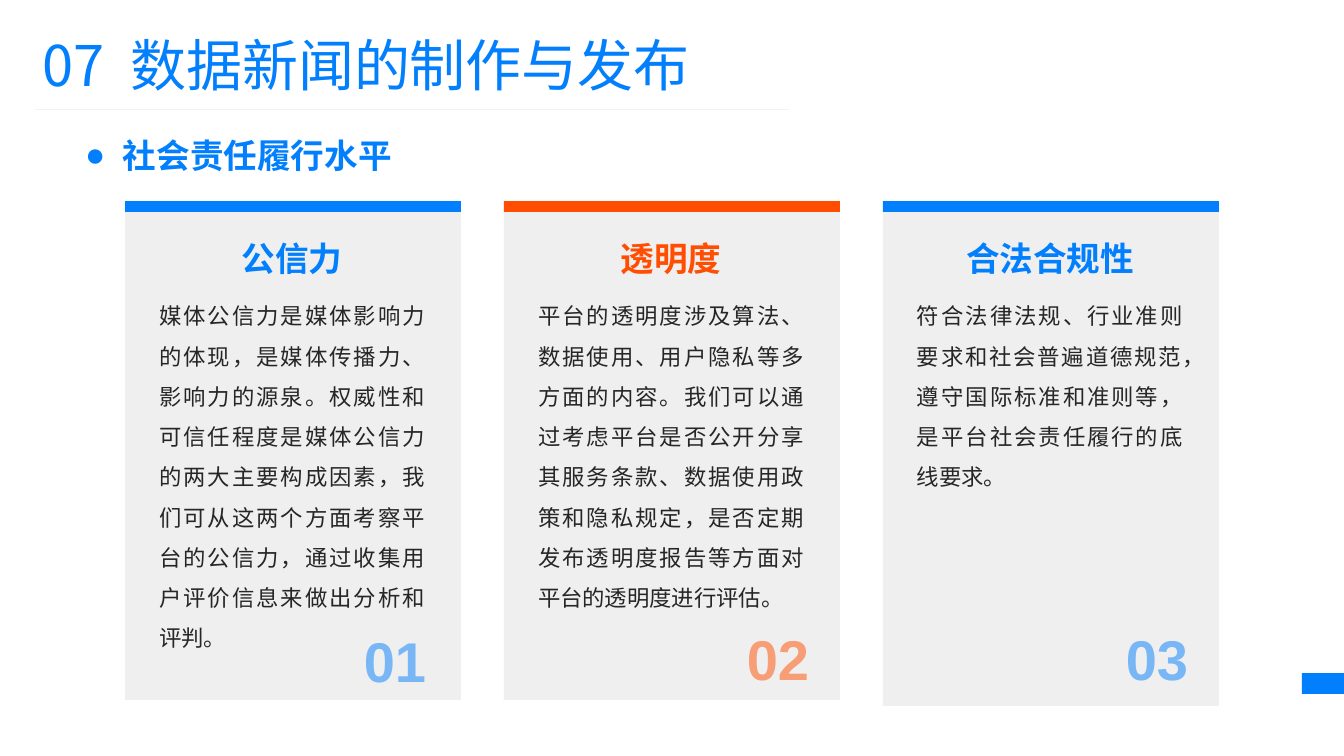
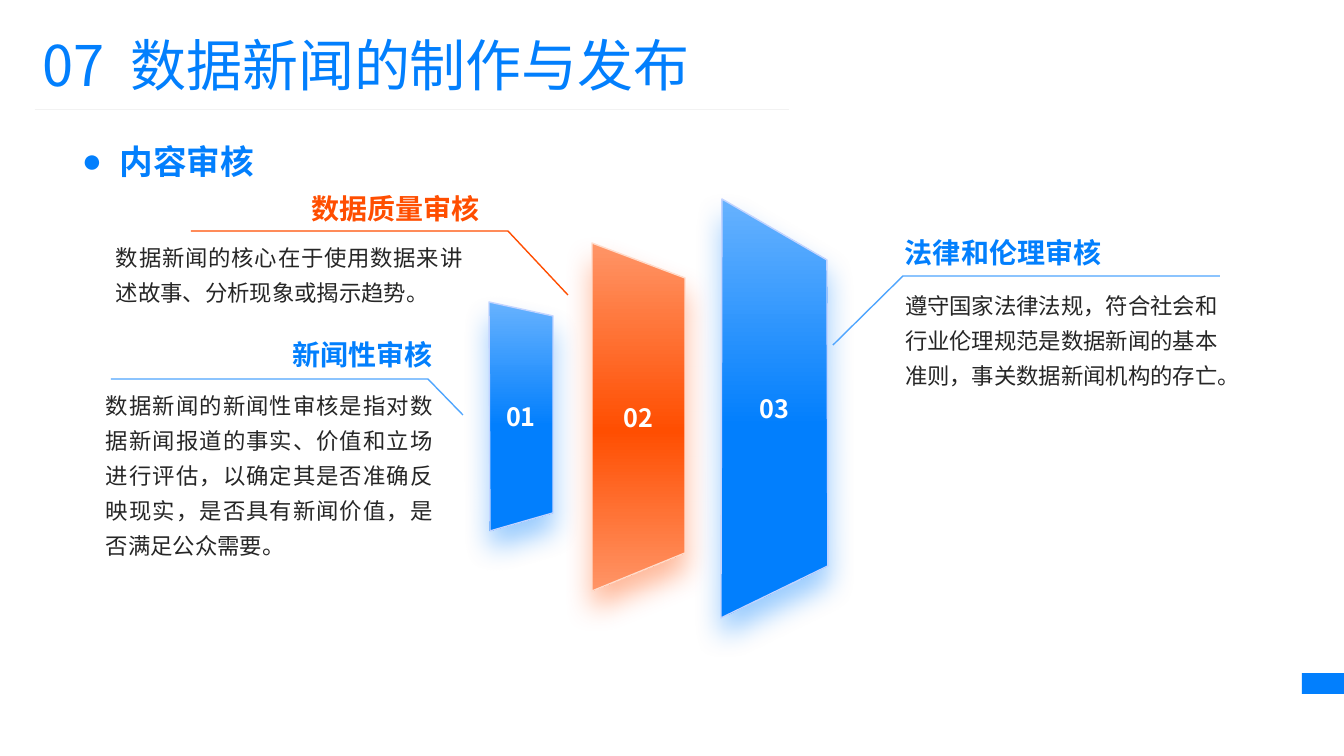
from dataclasses import dataclass

from lxml.etree import SubElement
from pptx import Presentation
from pptx.dml.color import RGBColor
from pptx.enum.shapes import MSO_CONNECTOR, MSO_SHAPE
from pptx.enum.text import MSO_ANCHOR, PP_ALIGN
from pptx.oxml.ns import qn
from pptx.util import Emu, Pt

EMU_PER_PX = 914400 / 100.8
FONT = "Noto Sans CJK SC"
BLUE, ORANGE = "027FFD", "FF4E01"
DARK, WHITE, GRAY, RULE = "262626", "FFFFFF", "999999", "F2F2F2"
CALLOUT_BLUE = "4FA5FE"
BLUE_STOPS = [(0, "67B2FE"), (54, BLUE), (100, BLUE)]
ORANGE_STOPS = [(0, "FF9567"), (54, ORANGE), (100, "FF9567")]
LEFT, CENTER, RIGHT = PP_ALIGN.LEFT, PP_ALIGN.CENTER, PP_ALIGN.RIGHT
JUSTIFY = PP_ALIGN.JUSTIFY
TOP, MIDDLE, BOTTOM = MSO_ANCHOR.TOP, MSO_ANCHOR.MIDDLE, MSO_ANCHOR.BOTTOM

CARD_WIDTH, CARD_HEIGHT, CARD_STEP = 336, 499, 379
CALLOUT_RULE = 317


@dataclass
class Card:
    heading: str
    body: str
    color: str
    panel_shift: int = 0
    number_shift: tuple = (0, 0)


@dataclass
class Callout:
    """Offsets are measured from the left end of the horizontal rule."""
    heading: str
    body: str
    color: str
    line_color: str
    rule_start: tuple
    tip: tuple
    heading_offset: tuple
    body_offset: tuple
    body_width: int
    heading_align: PP_ALIGN = RIGHT
    body_align: PP_ALIGN = JUSTIFY


CARDS = [
    Card("公信力",
         "媒体公信力是媒体影响力的体现，是媒体传播力、影响力的源泉。"
         "权威性和可信任程度是媒体公信力的两大主要构成因素，"
         "我们可从这两个方面考察平台的公信力，通过收集用户评价信息来做出分析和评判。",
         BLUE, number_shift=(-4, 2)),
    Card("透明度",
         "平台的透明度涉及算法、数据使用、用户隐私等多方面的内容。"
         "我们可以通过考虑平台是否公开分享其服务条款、数据使用政策和隐私规定，"
         "是否定期发布透明度报告等方面对平台的透明度进行评估。",
         ORANGE),
    Card("合法合规性",
         "符合法律法规、行业准则要求和社会普遍道德规范，"
         "遵守国际标准和准则等，是平台社会责任履行的底线要求。",
         BLUE, panel_shift=6),
]

CALLOUTS = [
    Callout("新闻性审核",
            "数据新闻的新闻性审核是指对数据新闻报道的事实、价值和立场进行评估，"
            "以确定其是否准确反映现实，是否具有新闻价值，是否满足公众需要。",
            BLUE, CALLOUT_BLUE, (111, 379), (463, 415), (20, -8), (-5, 5), 327),
    Callout("数据质量审核",
            "数据新闻的核心在于使用数据来讲述故事、分析现象或揭示趋势。",
            ORANGE, ORANGE, (191, 231), (568, 295), (-13, -6), (-75, 5), 347),
    Callout("法律和伦理审核",
            "遵守国家法律法规，符合社会和行业伦理规范是数据新闻的基本准则，"
            "事关数据新闻机构的存亡。",
            BLUE, CALLOUT_BLUE, (903, 276), (833, 345), (2, -7), (2, 8), 331,
            LEFT, LEFT),
]

PANELS = [
    ("01", [(489, 302), (553, 316), (553, 513), (490, 531)],
     BLUE_STOPS, BLUE, "C3D4FF"),
    ("02", [(592, 243), (685, 278), (685, 553), (592, 591)],
     ORANGE_STOPS, ORANGE, "FFDCCC"),
    ("03", [(722, 199), (827, 260), (828, 566), (721, 618)],
     BLUE_STOPS, BLUE, "C3D4FF"),
]


def px(value):
    return Emu(round(value * EMU_PER_PX))


def paint(fill, color, alpha=None):
    """Set a solid colour, with alpha as a percentage of opacity."""
    fill.solid()
    fill.fore_color.rgb = RGBColor.from_string(color)
    if alpha is not None:
        node = fill._xPr.find(qn("a:solidFill")).find(qn("a:srgbClr"))
        SubElement(node, qn("a:alpha"), val=str(alpha * 1000))


def write(shape, text, size=16, color=DARK, bold=False, font=FONT, align=LEFT,
          anchor=TOP, line_spacing=None, alpha=None, wrap=True):
    """Fill a shape with one paragraph; a list of strings becomes runs."""
    frame = shape.text_frame
    frame.word_wrap = wrap
    frame.vertical_anchor = anchor
    frame.margin_left = frame.margin_right = 0
    frame.margin_top = frame.margin_bottom = 0
    paragraph = frame.paragraphs[0]
    paragraph.alignment = align
    if line_spacing:
        paragraph.line_spacing = line_spacing
    for part in [text] if isinstance(text, str) else text:
        run = paragraph.add_run()
        run.text = part
        run.font.size = Pt(size)
        run.font.bold = bold
        run.font.name = font
        paint(run.font.fill, color, alpha)
        SubElement(run.font._element, qn("a:ea"), typeface=font)
    return paragraph


def add_text(slide, box, text, **text_format):
    shape = slide.shapes.add_textbox(*map(px, box))
    return write(shape, text, **text_format)


def add_rectangle(slide, box, color, alpha=None):
    shape = slide.shapes.add_shape(MSO_SHAPE.RECTANGLE, *map(px, box))
    shape.shadow.inherit = False
    shape.line.fill.background()
    paint(shape.fill, color, alpha)


def add_outline(slide, points, line_color, close):
    builder = slide.shapes.build_freeform(*points[0], scale=EMU_PER_PX)
    builder.add_line_segments(points[1:], close=close)
    shape = builder.convert_to_shape()
    shape.shadow.inherit = False
    shape.fill.background()
    paint(shape.line.fill, line_color)
    shape.line.width = Pt(1)
    return shape


def add_gradient(shape, stops):
    shape.fill.gradient()
    shape.fill.gradient_angle = 270
    stop_list = shape._element.spPr.find(qn("a:gradFill")).find(qn("a:gsLst"))
    for stop in list(stop_list):
        stop_list.remove(stop)
    for position, color in stops:
        stop = SubElement(stop_list, qn("a:gs"), pos=str(position * 1000))
        SubElement(stop, qn("a:srgbClr"), val=color)


def add_glow(shape, color):
    """Cast a soft coloured shadow downwards."""
    effects = shape._element.spPr.find(qn("a:effectLst"))
    shadow = SubElement(effects, qn("a:outerShdw"), blurRad=str(Pt(20)),
                        dist=str(Pt(12)), dir="5400000", algn="t",
                        rotWithShape="0")
    node = SubElement(shadow, qn("a:srgbClr"), val=color)
    SubElement(node, qn("a:alpha"), val="40000")


def add_section_heading(slide, box, text, align):
    paragraph = add_text(slide, box, text, size=24, color=BLUE, bold=True,
                         align=align, anchor=BOTTOM)
    properties = paragraph._p.get_or_add_pPr()
    properties.set("marL", "342900")
    properties.set("indent", "-342900")
    SubElement(properties, qn("a:buFont"), typeface="Arial")
    SubElement(properties, qn("a:buChar"), char="●")


def add_base_slide(presentation):
    """Add a blank slide with the shared title, rule and edge mark."""
    slide = presentation.slides.add_slide(presentation.slide_layouts[6])
    title = add_text(slide, (43, 31, 754, 68),
                     ["07", " ", "数据新闻的制作与发布"], size=40, color=BLUE)
    title.runs[1].font._element.set("spc", "900")
    rule = slide.shapes.add_connector(MSO_CONNECTOR.STRAIGHT,
                                      px(35), px(109), px(789), px(109))
    paint(rule.line.fill, RULE)
    rule.line.width = Pt(0.5)
    SubElement(rule._element.spPr, qn("a:effectLst"))
    add_rectangle(slide, (1302, 673, 42, 21), BLUE)
    return slide


def add_card(slide, left, top, number, card):
    add_rectangle(slide, (left, top + card.panel_shift, CARD_WIDTH, CARD_HEIGHT),
                  GRAY, alpha=15)
    add_rectangle(slide, (left, top, CARD_WIDTH, 11), card.color)
    add_text(slide, (left + 34, top - 25, 266, 102), card.heading, size=24,
             color=card.color, bold=True, align=CENTER, anchor=BOTTOM)
    add_text(slide, (left + 34, top + 88, 266, 292), card.body,
             align=JUSTIFY, line_spacing=1.5)
    shift_x, shift_y = card.number_shift
    add_text(slide, (left + 186 + shift_x, top + 415 + shift_y, 119, 84),
             f"{number:02}", size=40, color=card.color, alpha=50, bold=True,
             font="Arial", align=RIGHT, anchor=MIDDLE)


def add_panel(slide, label, corners, stops, color, edge_color):
    panel = add_outline(slide, corners, edge_color, close=True)
    add_gradient(panel, stops)
    add_glow(panel, color)
    write(panel, label, size=18, color=WHITE, bold=True, align=CENTER,
          anchor=MIDDLE, wrap=False)


def add_callout(slide, callout):
    left, top = callout.rule_start
    points = [(left, top), (left + CALLOUT_RULE, top)]
    if callout.tip[0] < left:
        points.reverse()
    add_outline(slide, points + [callout.tip], callout.line_color, close=False)
    shift_x, shift_y = callout.heading_offset
    add_text(slide, (left + shift_x, top + shift_y - 40, 302, 40),
             callout.heading, size=20, color=callout.color, bold=True,
             align=callout.heading_align, anchor=BOTTOM)
    shift_x, shift_y = callout.body_offset
    add_text(slide, (left + shift_x, top + shift_y, callout.body_width, 176),
             callout.body, align=callout.body_align, line_spacing=1.3)


def add_responsibility_slide(presentation):
    slide = add_base_slide(presentation)
    add_section_heading(slide, (8, 94, 461, 81), "社会责任履行水平", CENTER)
    for index, card in enumerate(CARDS):
        add_card(slide, 125 + index * CARD_STEP, 201, index + 1, card)


def add_review_slide(presentation):
    slide = add_base_slide(presentation)
    add_section_heading(slide, (82, 137, 399, 44), "内容审核", LEFT)
    for panel in PANELS:
        add_panel(slide, *panel)
    for callout in CALLOUTS:
        add_callout(slide, callout)


def main():
    presentation = Presentation()
    presentation.slide_width = px(1344)
    presentation.slide_height = px(756)
    add_responsibility_slide(presentation)
    add_review_slide(presentation)
    presentation.save("out.pptx")


if __name__ == "__main__":
    main()
